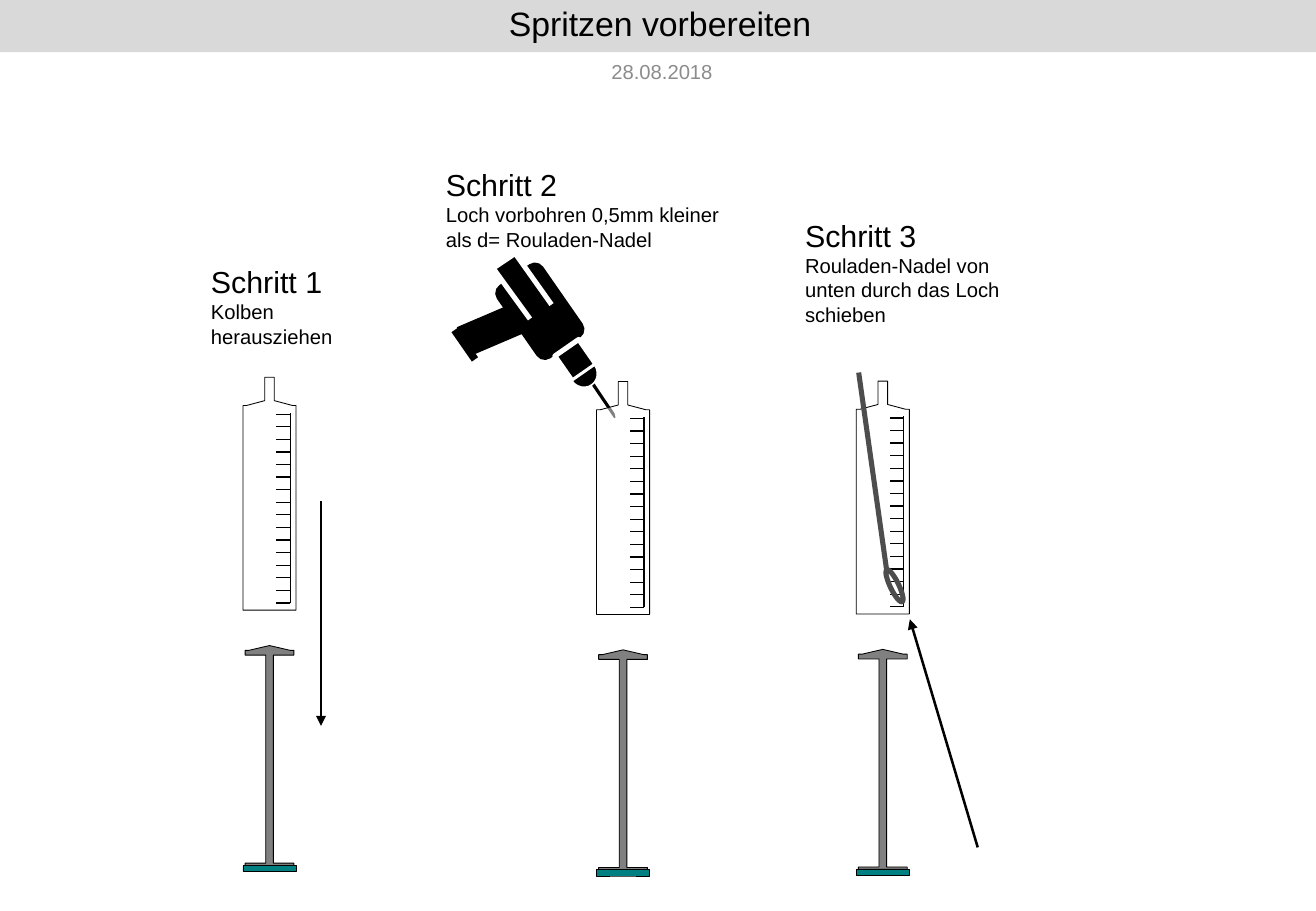
"""Build the slide on preparing syringes in three steps."""
import pptx
import pptx.dml.color
import pptx.enum.dml
import pptx.enum.shapes
import pptx.enum.text
import pptx.oxml.ns
import pptx.util
from lxml import etree

Cm, Pt = pptx.util.Cm, pptx.util.Pt
SHAPE = pptx.enum.shapes.MSO_SHAPE
ALIGN = pptx.enum.text.PP_ALIGN
qn = pptx.oxml.ns.qn

COLORS = {
    "black": "000000",
    "white": "FFFFFF",
    "band": "D9D9D9",
    "date": "8C8C8C",
    "plunger": "808080",
    "rubber": "008080",
    "needle": "4D4D4D",
}


def rgb(name):
    """Return the named colour."""
    return pptx.dml.color.RGBColor.from_string(COLORS[name])


def paint(sp, fill=None, line=None, width=0.5):
    """Set fill and outline of a shape and drop its shadow."""
    sp.shadow.inherit = False
    if fill:
        sp.fill.solid()
        sp.fill.fore_color.rgb = rgb(fill)
    else:
        sp.fill.background()
    if line:
        sp.line.color.rgb = rgb(line)
        sp.line.width = Pt(width)
    else:
        sp.line.fill.background()
    return sp


def add_preset(s, kind, x, y, w, h, rotation=0):
    """Add a preset shape."""
    sp = s.shapes.add_shape(kind, Cm(x), Cm(y), Cm(w), Cm(h))
    sp.rotation = rotation
    return sp


def add_outline(s, x, y, points, close=True):
    """Add a freeform whose points are relative to x, y."""
    pts = [(Cm(x + dx), Cm(y + dy)) for dx, dy in points]
    builder = s.shapes.build_freeform(*pts[0])
    builder.add_line_segments(pts[1:], close=close)
    return builder.convert_to_shape()


def add_line(s, x1, y1, x2, y2, color="black", width=0.75, arrow=False):
    """Add a straight line, with an arrowhead at its end if asked."""
    kind = pptx.enum.shapes.MSO_CONNECTOR.STRAIGHT
    cxn = s.shapes.add_connector(kind, Cm(x1), Cm(y1), Cm(x2), Cm(y2))
    cxn.line.color.rgb = rgb(color)
    cxn.line.width = Pt(width)
    if arrow:
        ln = cxn.line._get_or_add_ln()
        etree.SubElement(ln, qn("a:tailEnd"), type="triangle")
    etree.SubElement(cxn._element.spPr, qn("a:effectLst"))


def add_run(p, text, size, color="black"):
    """Add one run to a paragraph."""
    r = p.add_run()
    r.text = text
    r.font.name = "Arial"
    r.font.size = Pt(size)
    r.font.color.rgb = rgb(color)


def header(s, x, y, w, h):
    """Draw the title band and the date below it."""
    band = paint(add_preset(s, SHAPE.RECTANGLE, x, y, w, h), "band")
    date = s.shapes.add_textbox(Cm(x + 12.19), Cm(y + h), Cm(3.3), Cm(0.79))
    for sp, text, size, color in (
        (band, "Spritzen vorbereiten", 20, "black"),
        (date, "28.08.2018", 12, "date"),
    ):
        tf = sp.text_frame
        tf.word_wrap = True
        tf.vertical_anchor = pptx.enum.text.MSO_ANCHOR.MIDDLE
        p = tf.paragraphs[0]
        p.alignment = ALIGN.CENTER
        add_run(p, text, size, color)
    band.text_frame.paragraphs[0].line_spacing = 0.9


def caption(s, x, y, w, h, heading, body):
    """Write the heading and instruction of a step."""
    tf = s.shapes.add_textbox(Cm(x), Cm(y), Cm(w), Cm(h)).text_frame
    tf.word_wrap = True
    tf.auto_size = pptx.enum.text.MSO_AUTO_SIZE.SHAPE_TO_FIT_TEXT
    add_run(tf.paragraphs[0], heading, 18)
    add_run(tf.add_paragraph(), body, 12)


def syringe(s, x, y, w=1.11):
    """Draw a plunger below a barrel with its scale."""
    mid = w / 2

    def mirrored(half):
        """Complete a right half outline around the centre line."""
        return ([(mid + dx, dy) for dx, dy in half]
                + [(mid - dx, dy) for dx, dy in reversed(half)])

    plunger = mirrored([(0, 0), (0.43, 0.1), (0.51, 0.1), (0.51, 0.2), (0.08, 0.2),
                        (0.08, 4.55), (0.51, 4.55), (0.51, 4.6)])
    paint(add_outline(s, x, y + 5.61, plunger), "plunger", "black")
    paint(add_preset(s, SHAPE.RECTANGLE, x, y + 10.21, w, 0.13), "rubber", "black")

    barrel = mirrored([(0.1, 0), (0.1, 0.49), (0.48, 0.59), (mid, 0.59), (mid, 4.87)])
    sp = paint(add_outline(s, x, y, barrel), "white", "black")
    color = sp._element.spPr.find(qn("a:solidFill"))[0]
    etree.SubElement(color, qn("a:alpha"), val="50000")

    add_line(s, x + 0.99, y + 4.72, x + 0.99, y + 0.74)
    for i in range(16):
        tick = y + 0.77 + i * 3.95 / 15
        add_line(s, x + 0.99, tick, x + 0.7, tick)


def drill(s, x, y, angle=55.2):
    """Draw the power drill pointing down to the right."""
    foot = add_preset(s, SHAPE.RECTANGLE, x + 0.25, y + 1.91, 0.79, 0.2, angle)
    paint(foot, "black", "white", 1)
    handle = add_preset(s, SHAPE.PARALLELOGRAM, x + 0.74, y + 1.19, 0.86, 1.04, angle)
    paint(handle, "black", "black", 1)
    bit = [(3.25, 2.69), (3.76, 3.45), (3.78, 3.53), (3.23, 2.72)]
    paint(add_outline(s, x, y, bit), "black", "black", 1)
    body = add_preset(s, SHAPE.ROUNDED_RECTANGLE, x + 1.3, y + 0.74, 1.83, 1.14, angle)
    paint(body, "black", "black", 1)
    motor = [(2.01, 1.47), (1.24, 0.41), (1.7, 0.1), (2.46, 1.17)]
    paint(add_outline(s, x, y, motor, close=False), "black", "white", 3)
    chuck = add_preset(s, SHAPE.RECTANGLE, x + 2.64, y + 2.03, 0.64, 0.61, angle)
    paint(chuck, "black", "white", 3)
    cap = add_preset(s, SHAPE.PIE, x + 2.82, y + 2.31, 0.61, 0.58, angle + 180)
    cap.adjustments[0], cap.adjustments[1] = 54, 162
    paint(cap, "black", "white", 1)


def needle(s, x, y):
    """Draw the needle with its eye inside the barrel at x, y."""
    add_line(s, x + 0.05, y - 0.18, x + 0.64, y + 3.99, "needle", 3)
    eye = add_preset(s, SHAPE.OVAL, x + 0.71, y + 3.91, 0.18, 0.74, 334.3)
    paint(eye, None, "needle", 3)


def step_1(s, x, y):
    """Draw pulling out the plunger."""
    syringe(s, x, y)
    caption(s, x - 0.92, y - 2.51, 3.3, 2.06, "Schritt 1", "Kolben herausziehen")
    add_line(s, x + 1.63, y + 2.59, x + 1.63, y + 7.29, width=1.5, arrow=True)


def step_2(s, x, y):
    """Draw drilling the hole."""
    drill(s, x - 3.4, y - 2.78)
    syringe(s, x, y)
    caption(s, x - 3.4, y - 4.63, 6.43, 2.06, "Schritt 2",
            "Loch vorbohren 0,5mm kleiner als d= Rouladen-Nadel")


def step_3(s, x, y):
    """Draw pushing the needle through the hole."""
    syringe(s, x, y)
    needle(s, x, y)
    add_line(s, x + 2.54, y + 9.75, x + 1.12, y + 4.98, width=1.5, arrow=True)
    caption(s, x - 1.32, y - 3.56, 4.83, 2.57, "Schritt 3",
            "Rouladen-Nadel von unten durch das Loch schieben")


def main():
    """Build and save the slide."""
    prs = pptx.Presentation()
    prs.slide_width, prs.slide_height = Cm(27.51), Cm(19.05)
    s = prs.slides.add_slide(prs.slide_layouts[6])
    header(s, 0, 0, 27.6, 1.09)
    step_1(s, 5.08, 7.89)
    step_2(s, 12.47, 7.98)
    step_3(s, 17.9, 7.97)
    prs.save("out.pptx")


if __name__ == "__main__":
    main()
